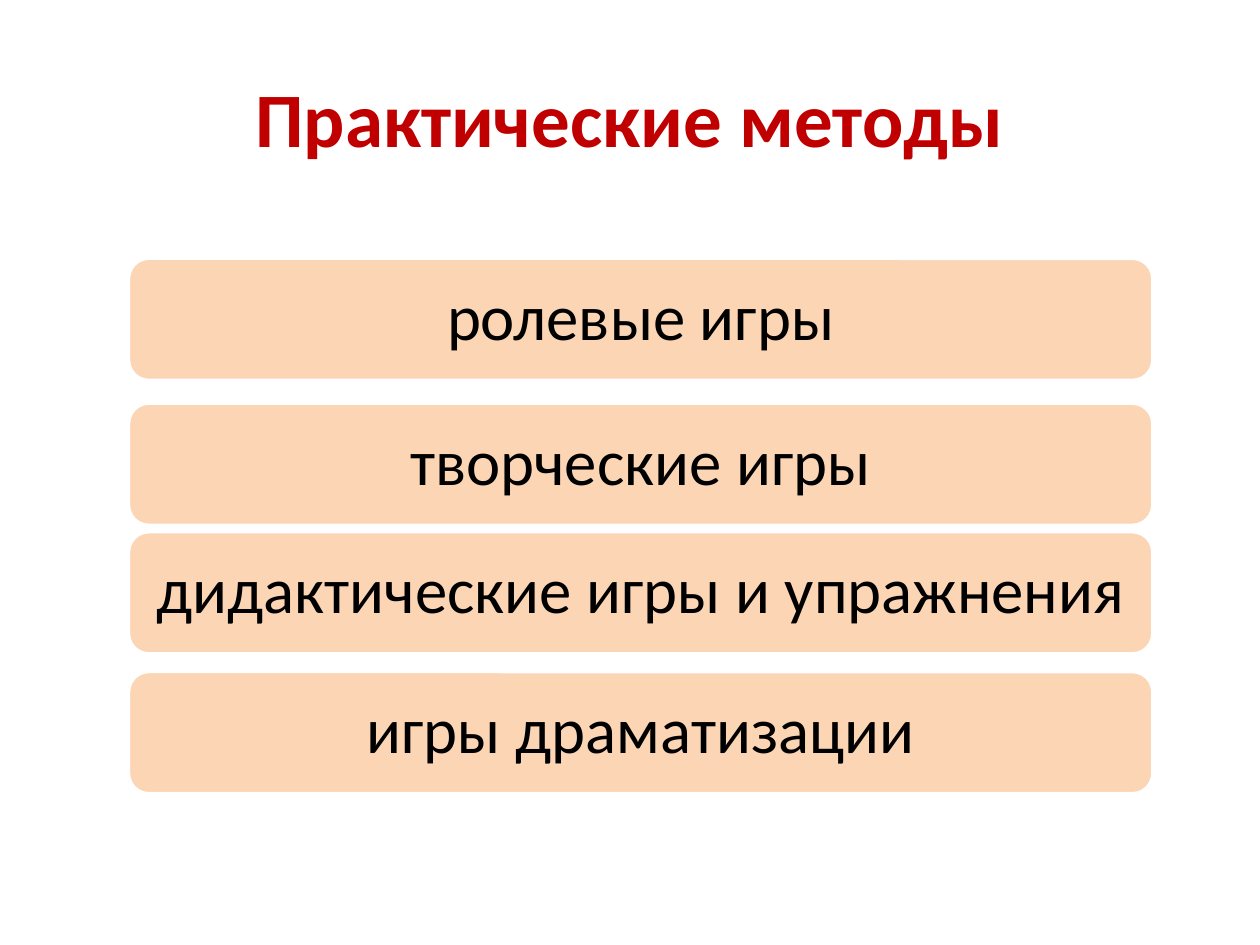
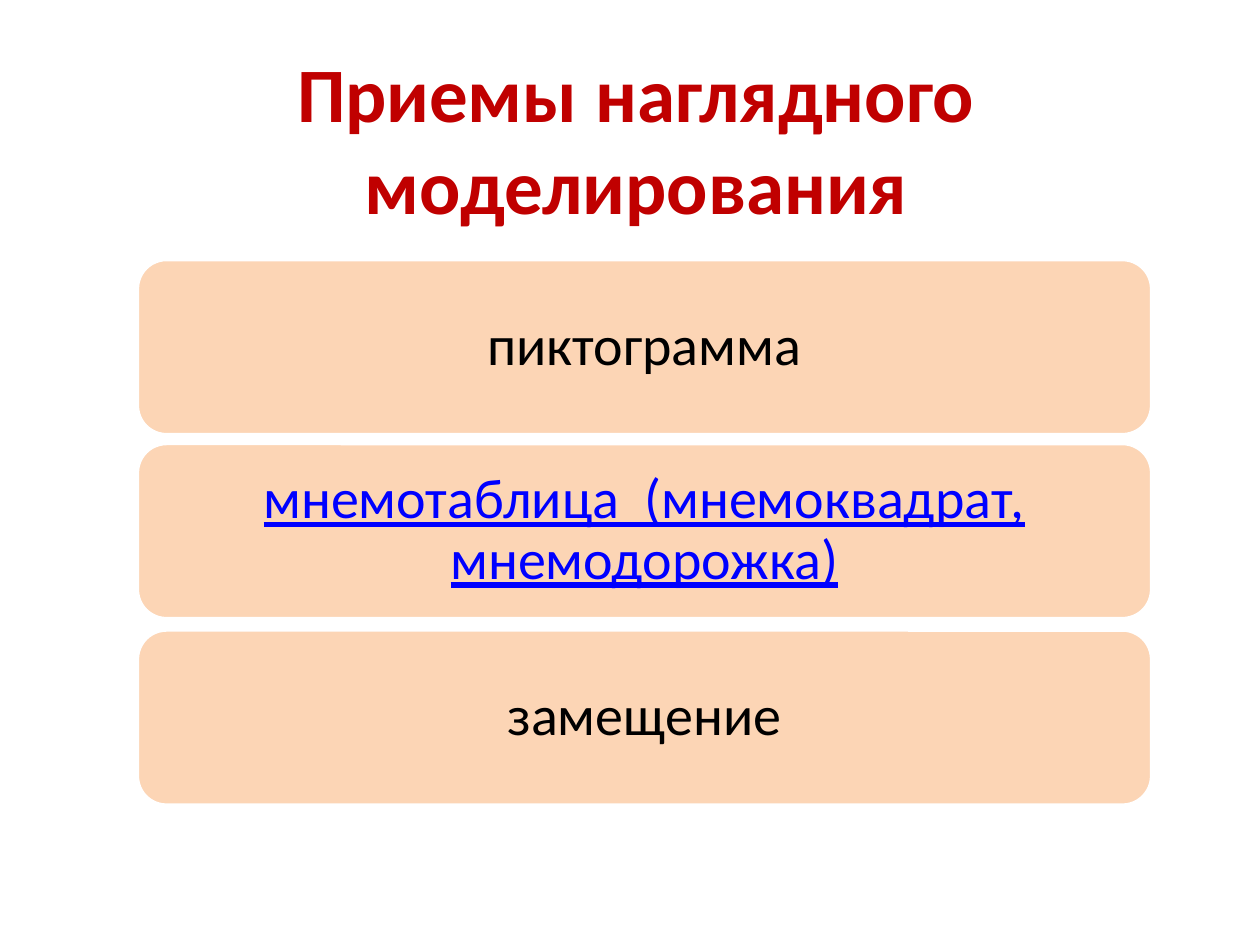
from pptx import Presentation
from pptx.dml.color import RGBColor
from pptx.enum.shapes import MSO_SHAPE
from pptx.enum.text import MSO_ANCHOR, MSO_AUTO_SIZE, PP_ALIGN
from pptx.util import Inches, Pt

ROUNDED = MSO_SHAPE.ROUNDED_RECTANGLE
MIDDLE = MSO_ANCHOR.MIDDLE
NO_FIT = MSO_AUTO_SIZE.NONE
CENTER = PP_ALIGN.CENTER

# Content: each band is its text and the top of its row, in inches
SLIDES = [
    {
        "title": "Практические методы",
        "title_at": (0.5, 0.3),
        "bands": [
            ("ролевые игры", 2.05),
            ("творческие игры", 3.2),
            ("дидактические игры и упражнения", 4.22),
            ("игры драматизации", 5.33),
        ],
        "column": (1.02, 8.13),
        "band_height": 0.97,
        "text_size": 37,
    },
    {
        "title": "Приемы наглядного моделирования",
        "title_at": (0.55, 0.47),
        "bands": [
            ("пиктограмма", 2.06),
            ("мнемотаблица  (мнемоквадрат, мнемодорожка)", 3.52),
            ("замещение", 5),
        ],
        "column": (1.09, 8.05),
        "band_height": 1.39,
        "text_size": 32,
        "underlined": 1,
    },
]

# Shared look
COLORS = {"title": "C00000", "band": "FCD5B5", "edge": "FFFFFF",
          "text": "000000", "underlined": "0000FF"}
FONT = "Calibri"
TITLE_SIZE = (9, 1.25)
TITLE_FORMAT = {"name": FONT, "size": Pt(44), "bold": True}
INSET = Inches(0.1)
FRAME_FORMAT = {"word_wrap": True, "auto_size": NO_FIT,
                "vertical_anchor": MIDDLE, "margin_left": INSET,
                "margin_right": INSET}


def color(name):
    return RGBColor.from_string(COLORS[name])


def set_all(target, values):
    for name, value in values.items():
        setattr(target, name, value)


def write(box, text, font_format, color_name, line_spacing):
    frame = box.text_frame
    set_all(frame, FRAME_FORMAT)
    para = frame.paragraphs[0]
    set_all(para, {"alignment": CENTER, "line_spacing": line_spacing})
    span = para.add_run()
    span.text = text
    set_all(span.font, font_format)
    span.font.color.rgb = color(color_name)


def add_title(page, content):
    title = page.shapes.title
    places = map(Inches, content["title_at"] + TITLE_SIZE)
    set_all(title, dict(zip(("left", "top", "width", "height"), places)))
    write(title, content["title"], TITLE_FORMAT, "title", 1.0)


def add_bands(page, content):
    left, width = content["column"]
    for index, (text, top) in enumerate(content["bands"]):
        band = page.shapes.add_shape(
            ROUNDED, *map(Inches, (left, top, width, content["band_height"])))
        band.shadow.inherit = False
        band.fill.solid()
        band.fill.fore_color.rgb = color("band")
        band.line.color.rgb = color("edge")
        band.line.width = Pt(2)
        underlined = index == content.get("underlined")
        font_format = {"name": FONT, "size": Pt(content["text_size"]),
                       "underline": underlined}
        write(band, text, font_format,
              "underlined" if underlined else "text", 0.9)


def main():
    deck = Presentation()
    deck.slide_width, deck.slide_height = Inches(10), Inches(7.5)
    title_only = deck.slide_layouts.get_by_name("Title Only")
    for content in SLIDES:
        page = deck.slides.add_slide(title_only)
        add_title(page, content)
        add_bands(page, content)
    deck.save("out.pptx")


if __name__ == "__main__":
    main()
